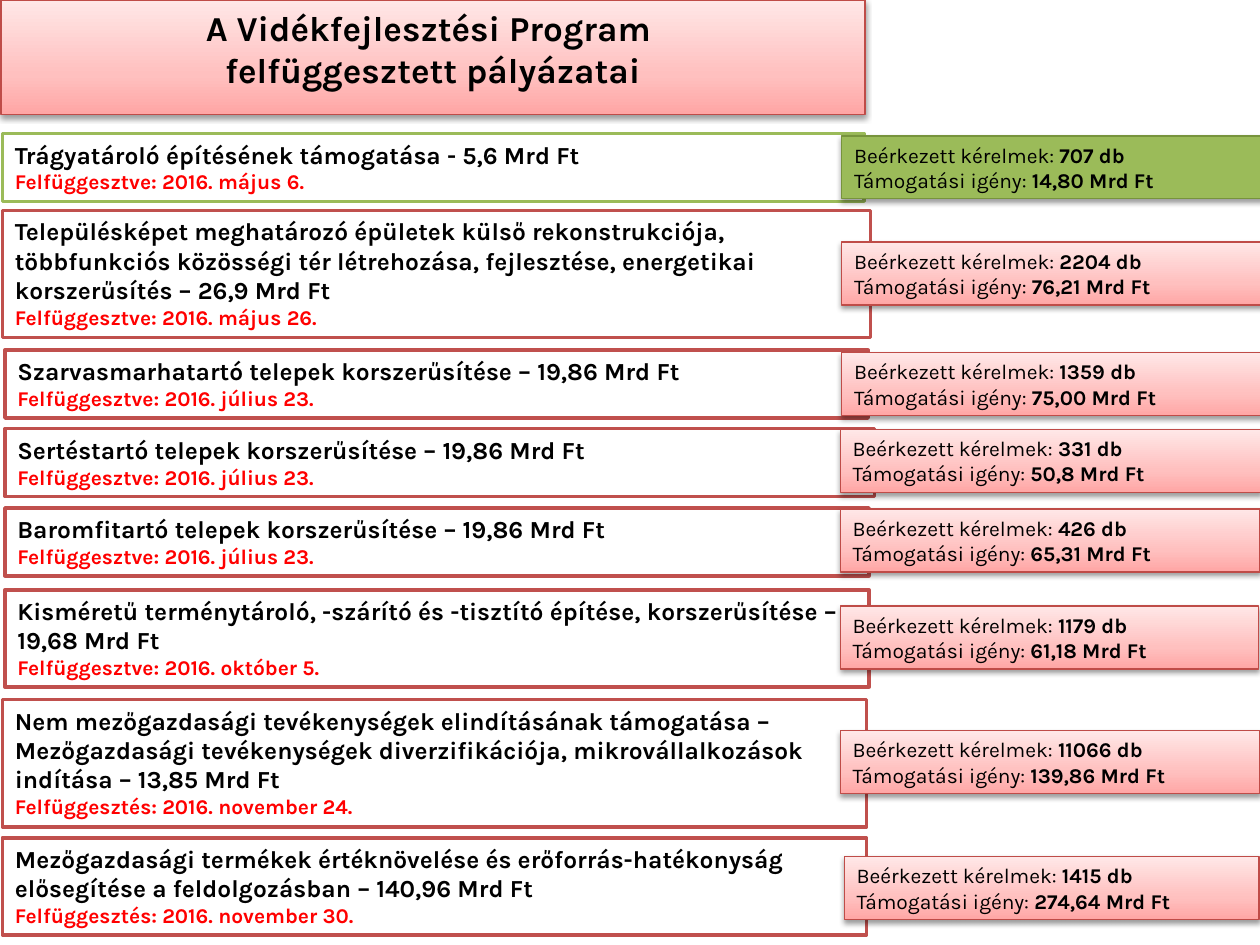
import copy

import pptx
import pptx.dml.color
import pptx.enum.shapes
import pptx.enum.text
import pptx.oxml
import pptx.oxml.ns
import pptx.util
from pptx.util import Cm

COLORS = {
    "text": "000000", "date": "FF0000", "white": "FFFFFF",
    "red": "C0504D", "red_edge": "BF4C48",
    "green": "9BBB59", "green_edge": "77933C",
    "deep": "FFA6A5", "mid": "FFC0BF", "pale": "FFE7E7",
}
GRADIENT = [(0, "deep"), (0.35, "mid"), (1, "pale")]
HEIGHTS = {1: 1.37, 2: 1.96, 3: 2.57}
CLAIM_HEIGHT = 1.27
SHADOW = (
    '<a:outerShdw %s blurRad="40000" dist="20000" dir="5400000" rotWithShape="0">'
    '<a:srgbClr val="%s"><a:alpha val="38000"/></a:srgbClr></a:outerShdw>'
)

HEADING = {"size": 14, "bold": True, "color": "text"}
DATE = {"size": 12, "bold": True, "color": "date"}
LABEL = {"size": 12, "bold": False, "color": "text"}
VALUE = {"size": 12, "bold": True, "color": "text"}
TITLE = {"size": 20, "bold": True, "color": "text"}

CALLS = [
    ("Trágyatároló építésének támogatása - 5,6 Mrd Ft",
     "Felfüggesztve: 2016. május 6.", 1, (0.05, 2.69, 17.37),
     "707 db", "14,80 Mrd Ft", (16.97, 2.74, 8.48)),
    ("Településképet meghatározó épületek külső rekonstrukciója, többfunkciós "
     "közösségi tér létrehozása, fejlesztése, energetikai korszerűsítés – 26,9 Mrd Ft",
     "Felfüggesztve: 2016. május 26.", 3, (0.05, 4.24, 17.5),
     "2204 db", "76,21 Mrd Ft", (16.97, 4.88, 8.48)),
    ("Szarvasmarhatartó telepek korszerűsítése – 19,86 Mrd Ft",
     "Felfüggesztve: 2016. július 23.", 1, (0.1, 7.06, 17.4),
     "1359 db", "75,00 Mrd Ft", (16.97, 7.11, 8.48)),
    ("Sertéstartó telepek korszerűsítése – 19,86 Mrd Ft",
     "Felfüggesztve: 2016. július 23.", 1, (0.1, 8.64, 17.53),
     "331 db", "50,8 Mrd Ft", (16.94, 8.66, 8.48)),
    ("Baromfitartó telepek korszerűsítése – 19,86 Mrd Ft",
     "Felfüggesztve: 2016. július 23.", 1, (0.1, 10.24, 17.42),
     "426 db", "65,31 Mrd Ft", (16.94, 10.26, 8.46)),
    ("Kisméretű terménytároló, -szárító és -tisztító építése, korszerűsítése – 19,68 Mrd Ft",
     "Felfüggesztve: 2016. október 5.", 2, (0.1, 11.89, 17.42),
     "1179 db", "61,18 Mrd Ft", (16.94, 12.22, 8.43)),
    ("Nem mezőgazdasági tevékenységek elindításának támogatása – Mezőgazdasági "
     "tevékenységek diverzifikációja, mikrovállalkozások indítása – 13,85 Mrd Ft",
     "Felfüggesztés: 2016. november 24.", 3, (0.05, 14.1, 17.42),
     "11066 db", "139,86 Mrd Ft", (16.94, 14.73, 8.46)),
    ("Mezőgazdasági termékek értéknövelése és erőforrás-hatékonyság elősegítése "
     "a feldolgozásban – 140,96 Mrd Ft",
     "Felfüggesztés: 2016. november 30.", 2, (0.05, 16.89, 17.42),
     "1415 db", "274,64 Mrd Ft", (17.02, 17.27, 8.36)),
]


def rgb(name):
    return pptx.dml.color.RGBColor.from_string(COLORS[name])


def set_attrs(obj, values):
    for name, value in values.items():
        setattr(obj, name, value)


def fill_solid(sp, color):
    sp.fill.solid()
    sp.fill.fore_color.rgb = rgb(color)


def fill_gradient(sp):
    sp.fill.gradient()
    sp.fill.gradient_angle = 90
    first = sp._element.spPr.find(".//" + pptx.oxml.ns.qn("a:gs"))
    first.addnext(copy.deepcopy(first))
    for stop, (position, color) in zip(sp.fill.gradient_stops, GRADIENT):
        stop.position = position
        stop.color.rgb = rgb(color)


def set_line(sp, color, width):
    sp.line.color.rgb = rgb(color)
    sp.line.width = pptx.util.Pt(width)


def add_shadow(sp):
    sp.shadow.inherit = False
    effects = sp._element.spPr.find(pptx.oxml.ns.qn("a:effectLst"))
    effects.append(pptx.oxml.parse_xml(
        SHADOW % (pptx.oxml.ns.nsdecls("a"), COLORS["text"])))


def write_text(sp, paragraphs, align, anchor, auto_size):
    tf = sp.text_frame
    set_attrs(tf, {"word_wrap": True, "vertical_anchor": anchor, "auto_size": auto_size})
    for i, runs in enumerate(paragraphs):
        p = tf.add_paragraph() if i else tf.paragraphs[0]
        set_attrs(p, {"alignment": align, "space_before": pptx.util.Pt(0)})
        for text, style in runs:
            r = p.add_run()
            r.text = text
            set_attrs(r.font, {"name": "Karla", "bold": style["bold"],
                               "size": pptx.util.Pt(style["size"])})
            r.font.color.rgb = rgb(style["color"])


def add_box(s, place, height, paragraphs):
    left, top, width = place
    sp = s.shapes.add_shape(pptx.enum.shapes.MSO_SHAPE.RECTANGLE,
                            Cm(left), Cm(top), Cm(width), Cm(height))
    sp.shadow.inherit = False
    write_text(sp, paragraphs, pptx.enum.text.PP_ALIGN.LEFT,
               pptx.enum.text.MSO_ANCHOR.TOP,
               pptx.enum.text.MSO_AUTO_SIZE.SHAPE_TO_FIT_TEXT)
    return sp


def add_title(s):
    sp = s.shapes.title
    set_attrs(sp, {"left": Cm(0.02), "top": Cm(0), "width": Cm(17.42), "height": Cm(2.31)})
    fill_gradient(sp)
    set_line(sp, "red_edge", 0.75)
    add_shadow(sp)
    lines = ["A Vidékfejlesztési Program ", "felfüggesztett pályázatai"]
    write_text(sp, [[(line, TITLE)] for line in lines],
               pptx.enum.text.PP_ALIGN.CENTER, pptx.enum.text.MSO_ANCHOR.TOP,
               pptx.enum.text.MSO_AUTO_SIZE.NONE)


def add_call(s, heading, date, lines, place, color):
    sp = add_box(s, place, HEIGHTS[lines], [[(heading, HEADING)], [(date, DATE)]])
    fill_solid(sp, "white")
    set_line(sp, color, 2)


def add_claim(s, count, amount, place, color):
    sp = add_box(s, place, CLAIM_HEIGHT, [
        [("Beérkezett kérelmek: ", LABEL), (count, VALUE)],
        [("Támogatási igény: ", LABEL), (amount, VALUE)],
    ])
    if color == "green":
        fill_solid(sp, color)
    else:
        fill_gradient(sp)
    set_line(sp, color + "_edge", 0.75)
    add_shadow(sp)


def main():
    prs = pptx.Presentation()
    set_attrs(prs, {"slide_width": Cm(25.4), "slide_height": Cm(19.05)})
    s = prs.slides.add_slide(prs.slide_layouts[5])
    add_title(s)
    for i, (heading, date, lines, place, count, amount, claim_place) in enumerate(CALLS):
        color = "red" if i else "green"
        add_call(s, heading, date, lines, place, color)
        add_claim(s, count, amount, claim_place, color)
    prs.save("out.pptx")


if __name__ == "__main__":
    main()
